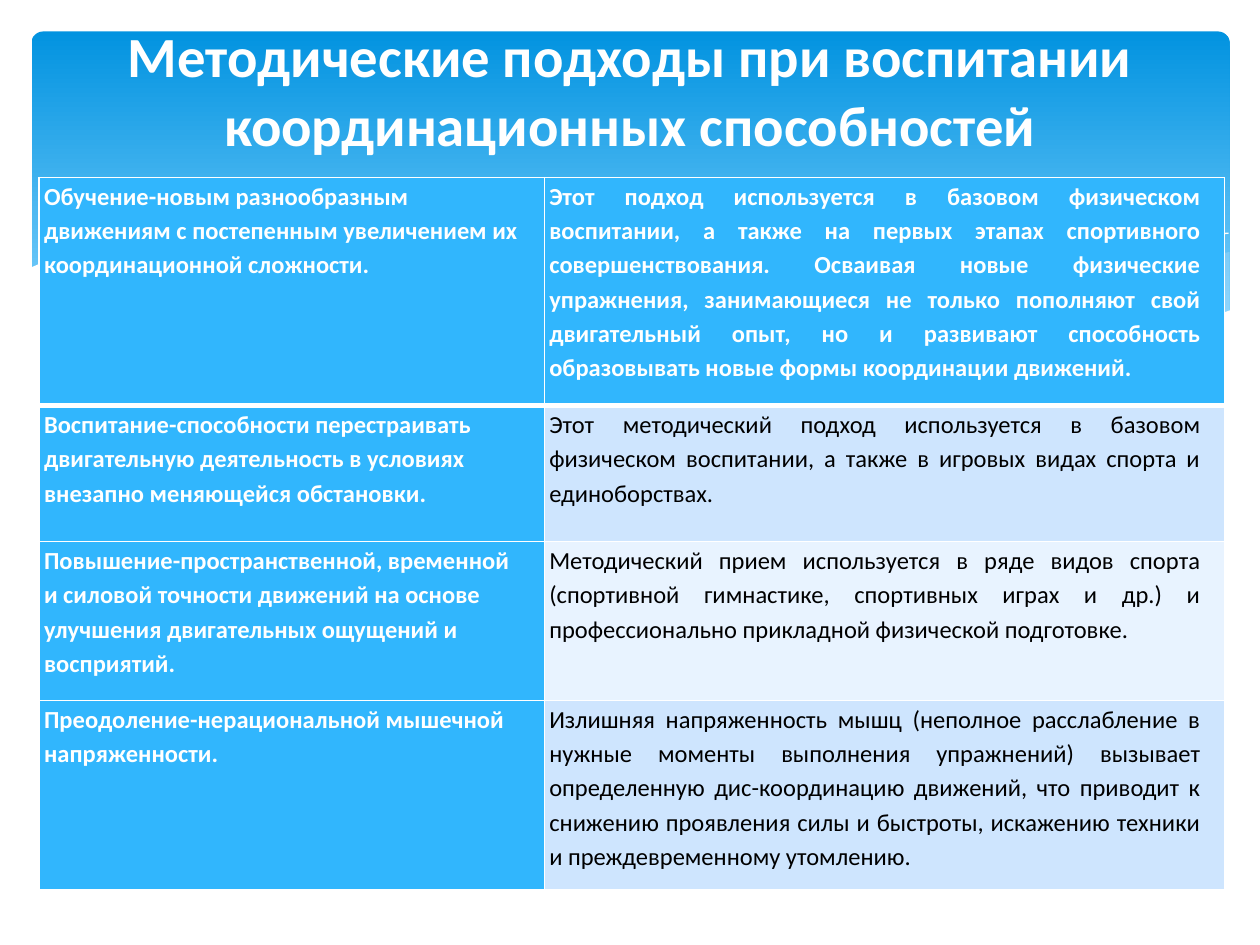
from lxml.etree import SubElement as Sub
from pptx import Presentation
from pptx.dml.color import RGBColor as Rgb
from pptx.enum.shapes import MSO_SHAPE as Kind
from pptx.enum.text import MSO_ANCHOR as Anchor, PP_ALIGN as Align
from pptx.oxml.ns import qn
from pptx.util import Inches, Pt

BLUE, WHITE, BLACK = "31B6FD", "FFFFFF", "000000"
BANDS = ["31B6FD", "CEE5FE", "E8F3FF", "CEE5FE"]
COLS = [4.01, 5.4]
ROWS = [1.81, 1.08, 1.26, 1.5]
TITLE = "Методические подходы при воспитании координационных способностей"
TEXTS = [
    ("Обучение-новым разнообразным движениям с постепенным увеличением "
     "их координационной сложности.",
     "Этот подход используется в базовом физическом воспитании, а также "
     "на первых этапах спортивного совершенствования. Осваивая новые "
     "физические упражнения, занимающиеся не только пополняют свой "
     "двигательный опыт, но и развивают способность образовывать новые "
     "формы координации движений."),
    ("Воспитание-способности перестраивать двигательную деятельность "
     "в условиях внезапно меняющейся обстановки.",
     "Этот методический подход используется в базовом физическом "
     "воспитании, а также в игровых видах спорта и единоборствах."),
    ("Повышение-пространственной, временной и силовой точности движений "
     "на основе улучшения двигательных ощущений и восприятий.",
     "Методический прием используется в ряде видов спорта (спортивной "
     "гимнастике, спортивных играх и др.) и профессионально прикладной "
     "физической подготовке."),
    ("Преодоление-нерациональной мышечной напряженности.",
     "Излишняя напряженность мышц (неполное расслабление в нужные моменты "
     "выполнения упражнений) вызывает определенную дис-координацию "
     "движений, что приводит к снижению проявления силы и быстроты, "
     "искажению техники и преждевременному утомлению."),
]

MIST = [(9.76, 2), (9.35, 2.07), (8.61, 2.23), (7.79, 2.42), (6.61, 2.65),
        (7.19, 2.72), (7.81, 2.77), (8.35, 2.77), (8.81, 2.73), (9.21, 2.65),
        (9.49, 2.57), (9.76, 2.47)]
SWELL = [(8.93, 2.73), (8.07, 2.6), (7.06, 2.4), (6.29, 2.22), (5.69, 2.08),
         (5.14, 1.98), (4.65, 1.91), (3.99, 1.86), (3.44, 1.86), (2.86, 1.91),
         (3.62, 2.03), (4.49, 2.22), (5.3, 2.4), (6.18, 2.58), (6.95, 2.7),
         (7.61, 2.77), (8.28, 2.78)]
LONG = [(3.09, 1.95), (3.44, 1.9), (4.01, 1.87), (4.69, 1.89), (5.33, 1.94),
        (6.08, 2.04), (6.95, 2.19), (7.95, 2.41), (9.07, 2.72)]
SHORT = [(6.13, 2.57), (6.95, 2.35), (7.76, 2.16), (8.66, 1.99),
         (9.24, 1.9), (9.75, 1.85)]
SHORE = [(9.77, 2.46), (9.4, 2.59), (8.99, 2.69), (8.5, 2.75), (8.09, 2.77),
         (7.44, 2.74), (6.68, 2.65), (5.79, 2.5), (4.47, 2.2), (3.65, 2.02),
         (2.92, 1.9), (2.3, 1.85), (1.77, 1.84), (1.19, 1.87), (0.76, 1.95),
         (0.46, 2.03), (0.23, 2.13), (0.23, 3.29), (9.77, 3.29)]


def paint(tone):
    return Rgb.from_string(tone)


def add_run(para, text, size, tone, bold):
    run = para.add_run()
    run.text = text
    font = run.font
    font.name, font.size, font.bold = "Calibri", Pt(size), bold
    font.color.rgb = paint(tone)


def add_banner(shapes):
    box = [Inches(n) for n in (0.25, 0.25, 9.51, 2.7)]
    shape = shapes.add_shape(Kind.ROUNDED_RECTANGLE, *box)
    shape.shadow.inherit = False
    shape.adjustments[0] = 0.034
    shape.line.fill.background()
    shape.fill.gradient()
    shape.fill.gradient_angle = 270
    tones = [(0, "0293E0"), (0.9, "83D3FE")]
    for stop, (place, tone) in zip(shape.fill.gradient_stops, tones):
        stop.position = place
        stop.color.rgb = paint(tone)


def trace(shapes, points, close):
    first, *rest = [(Inches(x), Inches(y)) for x, y in points]
    pen = shapes.build_freeform(*first)
    pen.add_line_segments(rest, close=close)
    shape = pen.convert_to_shape()
    shape.shadow.inherit = False
    return shape


def add_wave(shapes, points, tone, alpha=100):
    shape = trace(shapes, points, True)
    shape.line.fill.background()
    shape.fill.solid()
    shape.fill.fore_color.rgb = paint(tone)
    if alpha < 100:
        color = shape.fill._xPr.find(".//" + qn("a:srgbClr"))
        Sub(color, qn("a:alpha"), val=str(alpha * 1000))


def add_curve(shapes, points):
    shape = trace(shapes, points, False)
    shape.fill.background()
    shape.line.color.rgb = paint(WHITE)
    shape.line.width = Pt(0)


def add_edge(cell, side, width):
    props = cell._tc.get_or_add_tcPr()
    edge = Sub(props, qn("a:ln" + side), w=str(Pt(width)))
    fill = Sub(edge, qn("a:solidFill"))
    Sub(fill, qn("a:srgbClr"), val=WHITE)


def fill_cell(cell, text, row, col):
    cell.margin_left, cell.margin_right = Inches(0.04), Inches(0.19)
    cell.margin_top = cell.margin_bottom = 0
    for side in "LRTB":
        thick = (row, side) in [(0, "B"), (1, "T")]
        add_edge(cell, side, 3 if thick else 1)
    cell.fill.solid()
    cell.fill.fore_color.rgb = paint(BANDS[row] if col else BLUE)
    para = cell.text_frame.paragraphs[0]
    para.line_spacing = 1.15
    para.alignment = Align.JUSTIFY if col else Align.LEFT
    head = row == 0 or col == 0
    add_run(para, text, 14, WHITE if head else BLACK, head)


def add_grid(shapes):
    box = [Inches(n) for n in (0.31, 1.41, sum(COLS), sum(ROWS))]
    table = shapes.add_table(len(ROWS), len(COLS), *box).table
    for col, width in enumerate(COLS):
        table.columns[col].width = Inches(width)
    for row, (height, texts) in enumerate(zip(ROWS, TEXTS)):
        table.rows[row].height = Inches(height)
        for col, text in enumerate(texts):
            fill_cell(table.cell(row, col), text, row, col)


def add_title(shapes):
    box = [Inches(n) for n in (0.5, 0.55, 9, 0.86)]
    frame = shapes.add_textbox(*box).text_frame
    frame.word_wrap = True
    frame.vertical_anchor = Anchor.MIDDLE
    frame.margin_bottom = Inches(0.59)
    para = frame.paragraphs[0]
    para.alignment = Align.CENTER
    add_run(para, TITLE, 32.4, WHITE, True)


def main():
    deck = Presentation()
    deck.slide_width, deck.slide_height = Inches(10), Inches(7.5)
    shapes = deck.slides.add_slide(deck.slide_layouts[6]).shapes
    add_banner(shapes)
    add_wave(shapes, MIST, "C6E7FC", 29)
    add_wave(shapes, SWELL, "C6E7FC", 40)
    add_curve(shapes, LONG)
    add_curve(shapes, SHORT)
    add_wave(shapes, SHORE, WHITE)
    add_grid(shapes)
    add_title(shapes)
    deck.save("out.pptx")


if __name__ == "__main__":
    main()
